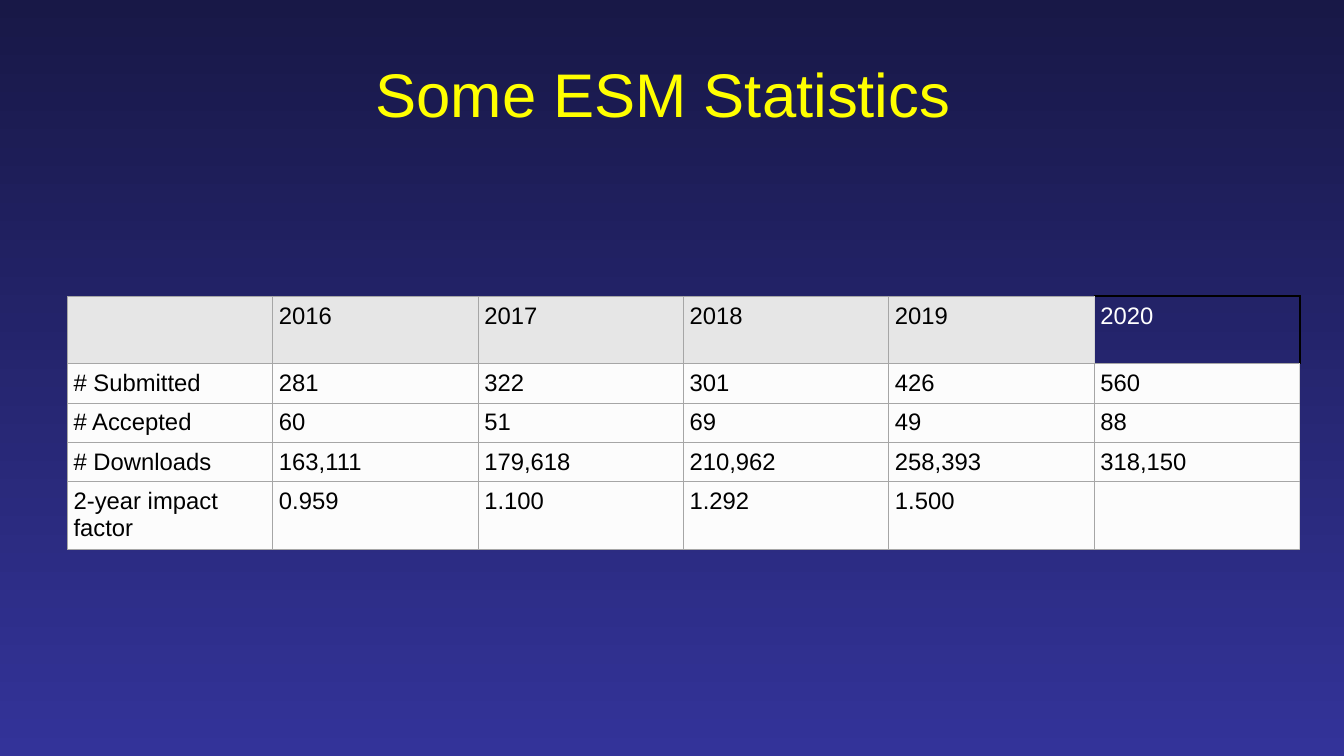
import pptx
import pptx.util
import pptx.dml.color
import pptx.enum.text
import pptx.oxml.ns
from lxml import etree

WIDTH, HEIGHT = pptx.util.Inches(13.33), pptx.util.Inches(7.5)
MARGIN = pptx.util.Inches(0.67)
COLORS = {
    "sky": "181847", "ground": "333399", "title": "FFFF00",
    "header": "E6E6E6", "body": "FCFCFC", "text": "000000",
    "light_text": "FFFFFF", "border": "A6A6A6", "edge": "D5D5D5",
    "frame": "000000",
}
ROWS = [
    ["", "2016", "2017", "2018", "2019", "2020"],
    ["# Submitted", "281", "322", "301", "426", "560"],
    ["# Accepted", "60", "51", "69", "49", "88"],
    ["# Downloads", "163,111", "179,618", "210,962", "258,393", "318,150"],
    ["2-year impact factor", "0.959", "1.100", "1.292", "1.500", ""],
]
ROW_HEIGHTS = [0.67, 0.39, 0.39, 0.39, 0.67]


def rgb(name):
    return pptx.dml.color.RGBColor.from_string(COLORS[name])


def add_run(p, text, size, color):
    r = p.add_run()
    r.text = text
    r.font.name = "Arial"
    r.font.size = pptx.util.Pt(size)
    r.font.bold = False
    r.font.color.rgb = rgb(color)


def set_background(s):
    fill = s.background.fill
    fill.gradient()
    fill.gradient_angle = 270
    for stop, color in zip(fill.gradient_stops, ("sky", "ground")):
        stop.color.rgb = rgb(color)


def set_title(s, text):
    sp = s.shapes.title
    sp.left, sp.top = MARGIN, int(HEIGHT * 0.04)
    sp.width, sp.height = WIDTH - 2 * MARGIN, pptx.util.Inches(1.25)
    tf = sp.text_frame
    tf.word_wrap = True
    tf.vertical_anchor = pptx.enum.text.MSO_ANCHOR.MIDDLE
    p = tf.paragraphs[0]
    p.alignment = pptx.enum.text.PP_ALIGN.CENTER
    add_run(p, text, 44, "title")


def set_borders(cell, colors):
    qn = pptx.oxml.ns.qn
    tc_pr = cell._tc.get_or_add_tcPr()
    for side in "LRTB":
        width = pptx.util.Pt(1.5 if colors[side] == "frame" else 0.75)
        ln = etree.SubElement(tc_pr, qn(f"a:ln{side}"), w=str(width))
        fill = etree.SubElement(ln, qn("a:solidFill"))
        etree.SubElement(fill, qn("a:srgbClr"), val=COLORS[colors[side]])


def format_cell(cell, text, is_header, is_last):
    is_open = is_header and is_last
    borders = dict.fromkeys("LRTB", "border")
    if is_open:
        borders.update(L="edge", R="frame", T="frame")
    elif is_last:
        borders["R"] = "edge"
    set_borders(cell, borders)
    if is_open:
        cell.fill.background()
    else:
        cell.fill.solid()
        cell.fill.fore_color.rgb = rgb("header" if is_header else "body")
    inset = pptx.util.Inches(0.06)
    cell.margin_left = cell.margin_right = inset
    cell.margin_top = cell.margin_bottom = inset
    if text:
        color = "light_text" if is_open else "text"
        add_run(cell.text_frame.paragraphs[0], text, 17, color)


def add_statistics(s):
    width = pptx.util.Inches(12.22)
    columns = len(ROWS[0])
    table = s.shapes.add_table(
        len(ROWS), columns, MARGIN, pptx.util.Inches(2.94),
        width, pptx.util.Inches(sum(ROW_HEIGHTS))).table
    table.first_row = table.horz_banding = False
    for column in table.columns:
        column.width = width // columns
    for i, (height, values) in enumerate(zip(ROW_HEIGHTS, ROWS)):
        table.rows[i].height = pptx.util.Inches(height)
        for j, text in enumerate(values):
            format_cell(table.cell(i, j), text, i == 0, j == columns - 1)


def main():
    prs = pptx.Presentation()
    prs.slide_width, prs.slide_height = WIDTH, HEIGHT
    s = prs.slides.add_slide(prs.slide_layouts[5])
    set_background(s)
    set_title(s, "Some ESM Statistics ")
    add_statistics(s)
    prs.save("out.pptx")


if __name__ == "__main__":
    main()
